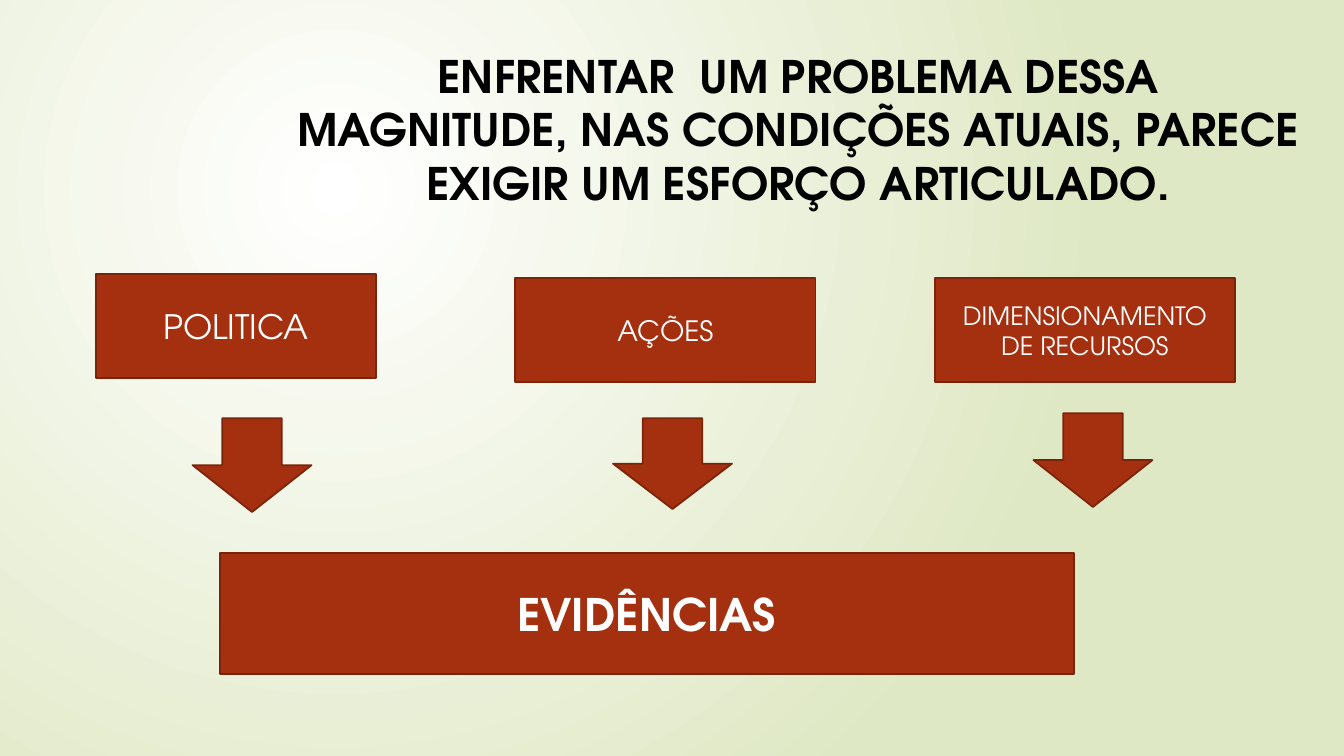
from dataclasses import dataclass

from lxml.etree import SubElement
from pptx import Presentation
from pptx.dml.color import RGBColor
from pptx.enum.shapes import MSO_SHAPE as Preset
from pptx.enum.text import MSO_ANCHOR as Anchor, MSO_AUTO_SIZE as AutoSize, PP_ALIGN as Align
from pptx.oxml.ns import qn
from pptx.slide import Slide
from pptx.text.text import TextFrame
from pptx.util import Emu, Pt

PX = 9144
FONT = "TeX Gyre Adventor"
COLOURS = {
    "glow": "FFFFFF",
    "meadow": "DFE8C4",
    "brick": "A53010",
    "edge": "7A240C",
    "light": "FFFFFF",
    "dark": "000000",
}


@dataclass(frozen=True)
class Area:
    left: int
    top: int
    width: int
    height: int

    def emu(self) -> tuple[Emu, ...]:
        return tuple(Emu(n * PX) for n in (self.left, self.top, self.width, self.height))


@dataclass(frozen=True)
class Wording:
    text: str
    size: int
    bold: bool = False
    colour: str = "light"


@dataclass(frozen=True)
class Pillar:
    wording: Wording
    top: int
    width: int
    arrow_top: int
    arrow_height: int


HEADLINE = Wording(
    "ENFRENTAR  UM PROBLEMA DESSA MAGNITUDE, NAS CONDIÇÕES ATUAIS, "
    "PARECE EXIGIR UM ESFORÇO ARTICULADO.",
    32, True, "dark",
)
PILLARS = (
    Pillar(Wording("POLITICA", 24), 272, 278, 415, 93),
    Pillar(Wording("AÇÕES", 20), 276, 298, 415, 90),
    Pillar(Wording("DIMENSIONAMENTO DE RECURSOS", 18), 276, 298, 410, 93),
)
EVIDENCE = Wording("EVIDÊNCIAS", 32, True)
PILLAR_LEFT, PILLAR_PITCH = 95, 416
ARROW_LEFT, ARROW_PITCH, ARROW_WIDTH = 191, 417, 118


def rgb(name: str) -> RGBColor:
    return RGBColor.from_string(COLOURS[name])


def paint_background(slide: Slide) -> None:
    fill = slide.background.fill
    fill.gradient()
    for stop, position, name in zip(fill.gradient_stops, (0, 1), ("glow", "meadow")):
        stop.position = position
        stop.color.rgb = rgb(name)
    gradient = next(slide.element.iter(qn("a:gradFill")))
    gradient.remove(gradient.find(qn("a:lin")))
    circle = SubElement(gradient, qn("a:path"), path="circle")
    SubElement(circle, qn("a:fillToRect"), l="50000", t="50000", r="100000", b="100000")


def write(frame: TextFrame, wording: Wording, anchor: Anchor) -> None:
    frame.word_wrap = True
    frame.vertical_anchor = anchor
    paragraph = frame.paragraphs[0]
    paragraph.alignment = Align.CENTER
    run = paragraph.add_run()
    run.text = wording.text
    run.font.name = FONT
    run.font.size = Pt(wording.size)
    run.font.bold = wording.bold
    run.font.color.rgb = rgb(wording.colour)


def add_headline(slide: Slide, area: Area, wording: Wording) -> None:
    frame = slide.shapes.add_textbox(*area.emu()).text_frame
    write(frame, wording, Anchor.TOP)
    frame.auto_size = AutoSize.SHAPE_TO_FIT_TEXT


def add_block(slide: Slide, preset: Preset, area: Area, wording: Wording | None = None) -> None:
    block = slide.shapes.add_shape(preset, *area.emu())
    block.shadow.inherit = False
    block.fill.solid()
    block.fill.fore_color.rgb = rgb("brick")
    block.line.color.rgb = rgb("edge")
    block.line.width = Pt(1.25)
    if wording:
        write(block.text_frame, wording, Anchor.MIDDLE)


def main() -> None:
    deck = Presentation()
    deck.slide_width, deck.slide_height = Emu(1333 * PX), Emu(750 * PX)
    slide = deck.slides.add_slide(deck.slide_layouts[6])
    paint_background(slide)
    add_headline(slide, Area(284, 43, 1016, 172), HEADLINE)
    for column, pillar in enumerate(PILLARS):
        left = PILLAR_LEFT + column * PILLAR_PITCH
        add_block(slide, Preset.RECTANGLE, Area(left, pillar.top, pillar.width, 103), pillar.wording)
    for column, pillar in enumerate(PILLARS):
        left = ARROW_LEFT + column * ARROW_PITCH
        area = Area(left, pillar.arrow_top, ARROW_WIDTH, pillar.arrow_height)
        add_block(slide, Preset.DOWN_ARROW, area)
    add_block(slide, Preset.RECTANGLE, Area(218, 549, 847, 120), EVIDENCE)
    deck.save("out.pptx")


if __name__ == "__main__":
    main()
